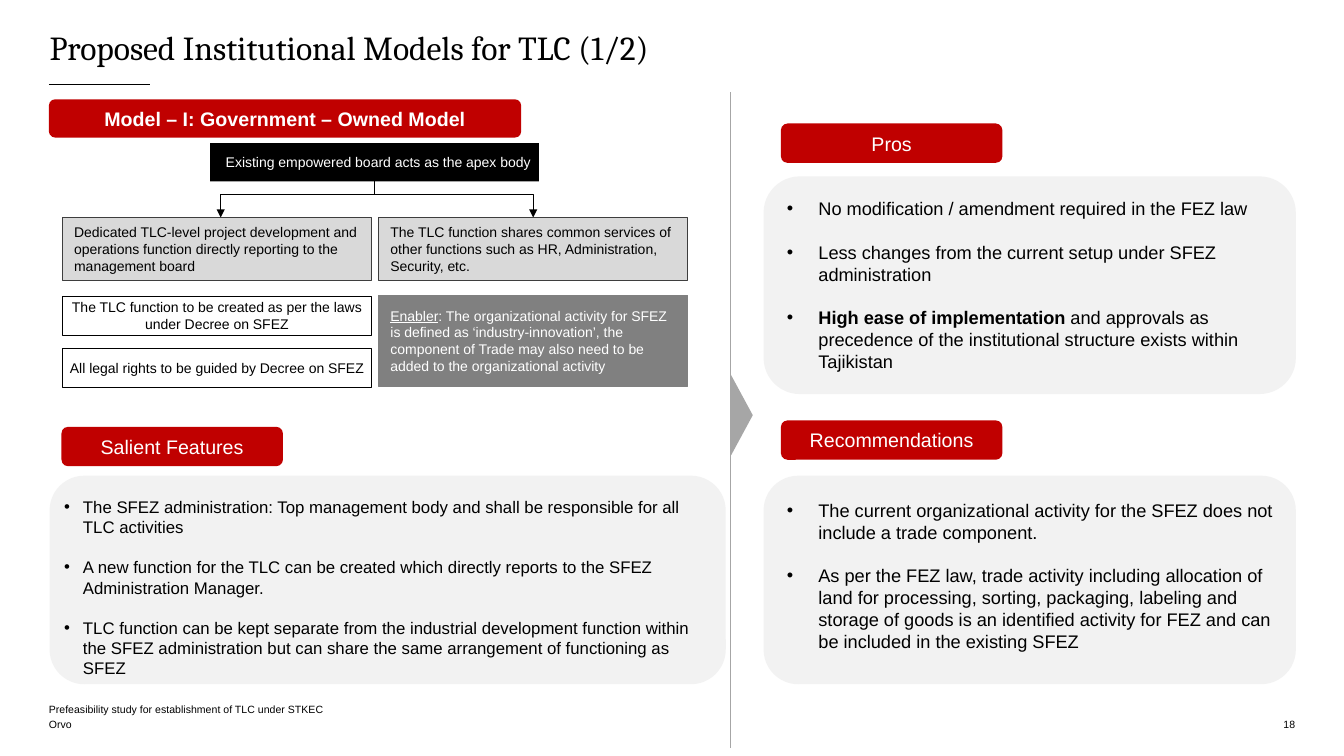
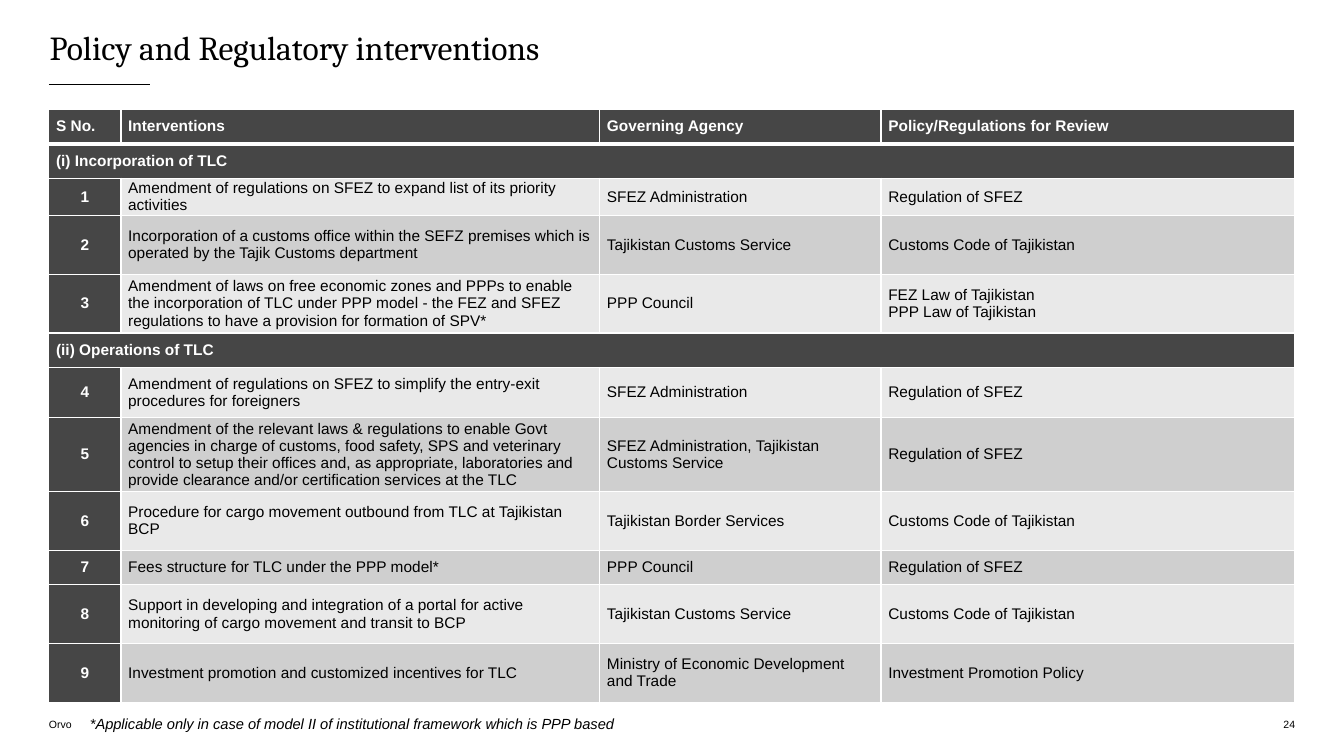
"""Build two slides on institutional models and policy interventions."""
from lxml.etree import SubElement
from pptx import Presentation
from pptx.dml.color import RGBColor
from pptx.enum.shapes import MSO_CONNECTOR, MSO_SHAPE
from pptx.enum.text import MSO_ANCHOR, PP_ALIGN
from pptx.oxml.ns import qn
from pptx.util import Pt

BLACK = RGBColor(0x00, 0x00, 0x00)
WHITE = RGBColor(0xFF, 0xFF, 0xFF)
RED = RGBColor(0xC0, 0x00, 0x00)
PANEL = RGBColor(0xF2, 0xF2, 0xF2)
PALE = RGBColor(0xD9, 0xD9, 0xD9)
OUTLINE = RGBColor(0x3E, 0x3E, 0x3E)
MIDDLE_GREY = RGBColor(0x80, 0x80, 0x80)
DIVIDER = RGBColor(0xA6, 0xA6, 0xA6)
CHARCOAL = RGBColor(0x46, 0x46, 0x46)
BANDS = (RGBColor(0xE9, 0xE9, 0xE9), RGBColor(0xCF, 0xCF, 0xCF))

LEFT, CENTER, RIGHT = PP_ALIGN.LEFT, PP_ALIGN.CENTER, PP_ALIGN.RIGHT
TOP, MIDDLE, BOTTOM = MSO_ANCHOR.TOP, MSO_ANCHOR.MIDDLE, MSO_ANCHOR.BOTTOM
RECTANGLE, ROUNDED = MSO_SHAPE.RECTANGLE, MSO_SHAPE.ROUNDED_RECTANGLE
TRIANGLE = MSO_SHAPE.ISOSCELES_TRIANGLE
STRAIGHT, ELBOW = MSO_CONNECTOR.STRAIGHT, MSO_CONNECTOR.ELBOW

MARGIN, CONTENT_WIDTH, FOOTER_TOP = 34.9, 890, 511.2
FIRM = "Orvo"
NO_INSETS = (0, 0, 0, 0)

SALIENT = [
    "The SFEZ administration: Top management body and shall be responsible for all TLC activities",
    "A new function for the TLC can be created which directly reports to the SFEZ "
    "Administration Manager.",
    "TLC function can be kept separate from the industrial development function within the SFEZ "
    "administration but can share the same arrangement of functioning as SFEZ",
]
PROS = [
    "No modification / amendment required in the FEZ law",
    "Less changes from the current setup under SFEZ administration",
    [("High ease of implementation ", {"bold": True}),
     ("and approvals as precedence of the institutional structure exists within Tajikistan", {})],
]
RECOMMENDATIONS = [
    "The current organizational activity for the SFEZ does not include a trade component.",
    "As per the FEZ law, trade activity including allocation of land for processing, sorting, "
    "packaging, labeling and storage of goods is an identified activity for FEZ and can be "
    "included in the existing SFEZ",
]
ENABLER = [[
    ("Enabler", {"underline": True}),
    (": The organizational activity for SFEZ is defined as ‘industry-innovation’, the component "
     "of Trade may also need to be added to the organizational activity", {}),
]]

SHORT, MEDIUM, TALL, TALLEST = 24.7, 35.7, 42, 49.3
COLUMN_WIDTHS = (51.5, 342, 201, 295.7)
HEADINGS = ("S No.", "Interventions", "Governing Agency", "Policy/Regulations for Review")
SECTIONS = [
    ("(i) Incorporation of TLC", [
        (SHORT, "Amendment of regulations on SFEZ to expand list of its priority activities",
         "SFEZ Administration", "Regulation of SFEZ"),
        (TALL, "Incorporation of a customs office within the SEFZ premises which is operated by "
         "the Tajik Customs department",
         "Tajikistan Customs Service", "Customs Code of Tajikistan"),
        (TALL, "Amendment of laws on free economic zones and PPPs to enable the incorporation of "
         "TLC under PPP model - the FEZ and SFEZ regulations to have a provision for formation "
         "of SPV*",
         "PPP Council", "FEZ Law of Tajikistan\nPPP Law of Tajikistan"),
    ]),
    ("(ii) Operations of TLC", [
        (MEDIUM, "Amendment of regulations on SFEZ to simplify the entry-exit procedures for "
         "foreigners",
         "SFEZ Administration", "Regulation of SFEZ"),
        (TALLEST, "Amendment of the relevant laws & regulations to enable Govt agencies in charge "
         "of customs, food safety, SPS and veterinary control to setup their offices and, as "
         "appropriate, laboratories and provide clearance and/or certification services at the "
         "TLC",
         "SFEZ Administration, Tajikistan Customs Service", "Regulation of SFEZ"),
        (TALL, "Procedure for cargo movement outbound from TLC at Tajikistan BCP",
         "Tajikistan Border Services", "Customs Code of Tajikistan"),
        (SHORT, "Fees structure for TLC under the PPP model*",
         "PPP Council", "Regulation of SFEZ"),
        (TALL, "Support in developing and integration of a portal for active monitoring of cargo "
         "movement and transit to BCP",
         "Tajikistan Customs Service", "Customs Code of Tajikistan"),
        (TALL, "Investment promotion and customized incentives for TLC",
         "Ministry of Economic Development and Trade", "Investment Promotion Policy"),
    ]),
]


def write(frame, paragraphs, *, size, color=BLACK, font="Arial", bold=False, italic=False,
          align=LEFT, anchor=TOP, insets=(7.2, 3.6, 7.2, 3.6), hang=0, gap=0, leading=None,
          cell=None):
    """Fill a text frame; each paragraph is a string or a list of (text, emphasis) spans."""
    holder = cell or frame
    if cell is None:
        frame.word_wrap = True
    holder.vertical_anchor = anchor
    (holder.margin_left, holder.margin_top,
     holder.margin_right, holder.margin_bottom) = map(Pt, insets)
    if isinstance(paragraphs, str):
        paragraphs = [paragraphs]
    for index, content in enumerate(paragraphs):
        para = frame.add_paragraph() if index else frame.paragraphs[0]
        para.alignment = align
        if hang:
            properties = para._p.get_or_add_pPr()
            properties.set("marL", str(Pt(hang)))
            properties.set("indent", str(-Pt(hang)))
            SubElement(properties, qn("a:buFont"), typeface="Arial")
            SubElement(properties, qn("a:buChar"), char="•")
        if index and gap:
            para.space_before = Pt(gap)
        if leading:
            para.line_spacing = leading
        for text, emphasis in [(content, {})] if isinstance(content, str) else content:
            for number, line in enumerate(text.split("\n")):
                if number:
                    para.add_line_break()
                span = para.add_run()
                span.text = line
                span.font.name, span.font.size = font, Pt(size)
                span.font.bold, span.font.italic = emphasis.get("bold", bold), italic
                span.font.underline = emphasis.get("underline", False)
                span.font.color.rgb = color


class Deck:
    """Hold the shared style and the slide being drawn."""

    def __init__(self):
        """Start a widescreen deck."""
        self.file = Presentation()
        self.file.slide_width, self.file.slide_height = Pt(960), Pt(540)
        self.page = None

    def add_page(self, title, number):
        """Add a slide with its title, short rule and footer."""
        self.page = self.file.slides.add_slide(self.file.slide_layouts[5])
        box = self.page.shapes.title
        box.left, box.top, box.width, box.height = map(Pt, (35.4, 7.8, CONTENT_WIDTH, 56.9))
        write(box.text_frame, title, size=24, font="Cambria", anchor=MIDDLE,
              insets=NO_INSETS, leading=0.85)
        self.line((MARGIN, 60.5), (107.2, 60.5), width=1)
        self.footer(FIRM)
        self.footer(str(number), left=786.2, width=139, align=RIGHT)

    def footer(self, text, left=MARGIN, top=FOOTER_TOP, width=431, align=LEFT):
        """Add one small footer line."""
        self.text((left, top, width, 10.8), text, size=7.5, align=align,
                  anchor=BOTTOM, insets=NO_INSETS)

    def text(self, place, paragraphs, **style):
        """Add a text box."""
        box = self.page.shapes.add_textbox(*map(Pt, place))
        write(box.text_frame, paragraphs, **style)

    def shape(self, kind, place, fill=None, line=None, line_width=0.75):
        """Add a flat shape and return it."""
        shape = self.page.shapes.add_shape(kind, *map(Pt, place))
        shape.shadow.inherit = False
        if fill is None:
            shape.fill.background()
        else:
            shape.fill.solid()
            shape.fill.fore_color.rgb = fill
        if line is None:
            shape.line.fill.background()
        else:
            shape.line.color.rgb = line
            shape.line.width = Pt(line_width)
        return shape

    def tag(self, place, text, bold=False):
        """Add a red heading label."""
        shape = self.shape(ROUNDED, place, RED)
        write(shape.text_frame, text, size=14, color=WHITE, bold=bold,
              align=CENTER, anchor=MIDDLE)

    def node(self, place, paragraphs, fill=None, line=None, line_width=0.75, **style):
        """Add a box of the organisation chart."""
        shape = self.shape(RECTANGLE, place, fill, line, line_width)
        write(shape.text_frame, paragraphs, size=10, anchor=MIDDLE, **style)

    def line(self, start, end, color=BLACK, width=0.75, kind=STRAIGHT, arrow=False):
        """Add a connector; an elbow turns at its far end."""
        connector = self.page.shapes.add_connector(kind, *map(Pt, (*start, *end)))
        connector.line.color.rgb = color
        connector.line.width = Pt(width)
        properties = connector._element.spPr
        if kind == ELBOW:
            guides = properties.find(qn("a:prstGeom")).get_or_add_avLst()
            SubElement(guides, qn("a:gd"), name="adj1", fmla="val 100000")
        if arrow:
            SubElement(properties.find(qn("a:ln")), qn("a:tailEnd"), type="triangle")
        SubElement(properties, qn("a:effectLst"))

    def cell(self, cell, text, fill, top=1, bottom=1, **style):
        """Format one table cell with white borders."""
        properties = cell._tc.get_or_add_tcPr()
        for side, width in (("L", 1), ("R", 1), ("T", top), ("B", bottom)):
            border = SubElement(properties, qn(f"a:ln{side}"), w=str(Pt(width)))
            paint = SubElement(border, qn("a:solidFill"))
            SubElement(paint, qn("a:srgbClr"), val=str(WHITE))
        cell.fill.solid()
        cell.fill.fore_color.rgb = fill
        write(cell.text_frame, text, size=11, anchor=MIDDLE, insets=(5.2, 0, 5.2, 0),
              cell=cell, **style)

    def interventions(self, left, top):
        """Add the table of numbered interventions grouped in sections."""
        heights = [SHORT]
        for _, entries in SECTIONS:
            heights += [SHORT, *(entry[0] for entry in entries)]
        frame = self.page.shapes.add_table(
            len(heights), len(COLUMN_WIDTHS),
            *map(Pt, (left, top, sum(COLUMN_WIDTHS), sum(heights))))
        table = frame.table
        table.first_row = table.horz_banding = False
        for column, width in zip(table.columns, COLUMN_WIDTHS):
            column.width = Pt(width)
        for row, height in zip(table.rows, heights):
            row.height = Pt(height)
        heading = {"fill": CHARCOAL, "color": WHITE, "bold": True}
        for column, text in enumerate(HEADINGS):
            self.cell(table.cell(0, column), text, bottom=3, **heading)
        row, number = 1, 0
        for section, entries in SECTIONS:
            table.cell(row, 0).merge(table.cell(row, len(HEADINGS) - 1))
            self.cell(table.cell(row, 0), section, top=3 if row == 1 else 1, **heading)
            row += 1
            for band, (_, *texts) in enumerate(entries):
                number += 1
                self.cell(table.cell(row, 0), str(number), align=CENTER, **heading)
                for column, text in enumerate(texts, start=1):
                    self.cell(table.cell(row, column), text, BANDS[band % 2])
                row += 1


def draw_model(deck):
    """Draw the government-owned model with its pros and recommendations."""
    deck.add_page("Proposed Institutional Models for TLC (1/2)", 18)
    deck.footer("Prefeasibility study for establishment of TLC under STKEC", top=500.4)
    deck.tag((MARGIN, 70.9, 337.4, 27.4), "Model – I: Government – Owned Model", bold=True)

    deck.node((150.2, 102.2, 234.7, 27.4), "Existing empowered board acts as the apex body",
              BLACK, color=WHITE, align=CENTER, insets=(8.6, 3, 3.6, 3))
    trunk, branch_top, node_top = 267.8, 139, 155.4
    deck.line((trunk, 129), (trunk, branch_top))
    for branch in (157.7, 380.9):
        deck.line((trunk, branch_top), (branch, node_top), kind=ELBOW, arrow=True)
    first, second, node_width = 44.4, 270.3, 221
    functions = (
        "Dedicated TLC-level project development and operations function directly reporting to "
        "the management board",
        "The TLC function shares common services of other functions such as HR, Administration, "
        "Security, etc.",
    )
    for left, text in zip((first, second), functions):
        deck.node((left, node_top, node_width, 45.1), text, PALE, OUTLINE,
                  insets=(8.6, 3, 8.6, 3))
    rules = ("The TLC function to be created as per the laws under Decree on SFEZ",
             "All legal rights to be guided by Decree on SFEZ")
    for index, text in enumerate(rules):
        deck.node((first, 211.6 + 37 * index, node_width, 28), text, line=BLACK, line_width=0.5,
                  align=CENTER, insets=(3, 3, 3, 3))
    deck.node((second, 210.8, node_width, 65.2), ENABLER, MIDDLE_GREY, MIDDLE_GREY,
              color=WHITE, insets=(8.6, 0, 8.6, 0))

    deck.line((521.7, 66), (521.7, 534.4), DIVIDER, width=1)
    deck.shape(TRIANGLE, (500.6, 288.7, 58.4, 15.8), DIVIDER).rotation = 90

    blocks = [
        ("Salient Features", (43.9, 304.9), (35.4, 339.8, 483, 149),
         (38.7, 351.4, 480, 138), SALIENT, {"size": 12, "hang": 13.5, "gap": 14.2}),
        ("Pros", (557.8, 88.2), (545.4, 126, 380.2, 155.5),
         (555, 137.5, 370, 133), PROS, {"size": 13, "hang": 22.5, "gap": 15.6}),
        ("Recommendations", (557.8, 300.3), (545.4, 339.8, 380.2, 149),
         (555, 353, 361, 117), RECOMMENDATIONS, {"size": 13, "hang": 22.5, "gap": 15.4}),
    ]
    for heading, corner, panel, body, bullets, style in blocks:
        deck.tag((*corner, 158.2, 28.1), heading)
        deck.shape(ROUNDED, panel, PANEL)
        deck.text(body, bullets, **style)


def draw_policy(deck):
    """Draw the table of policy interventions."""
    deck.add_page("Policy and Regulatory interventions", 24)
    deck.interventions(MARGIN, 78)
    deck.text((64.2, 510.5, 433, 13),
              "*Applicable only in case of model II of institutional framework which is PPP based",
              size=10.5, italic=True, insets=NO_INSETS)


def main():
    """Build and save the deck."""
    deck = Deck()
    draw_model(deck)
    draw_policy(deck)
    deck.file.save("out.pptx")


if __name__ == "__main__":
    main()
